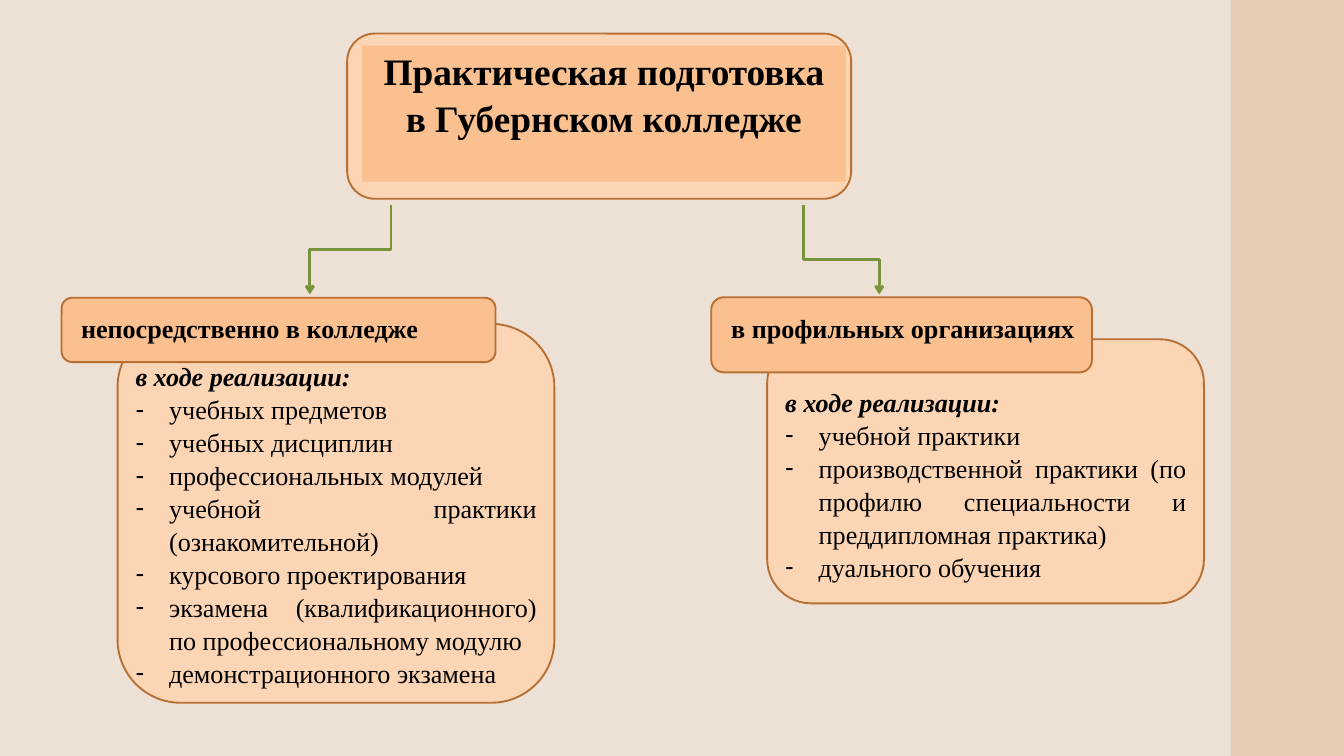
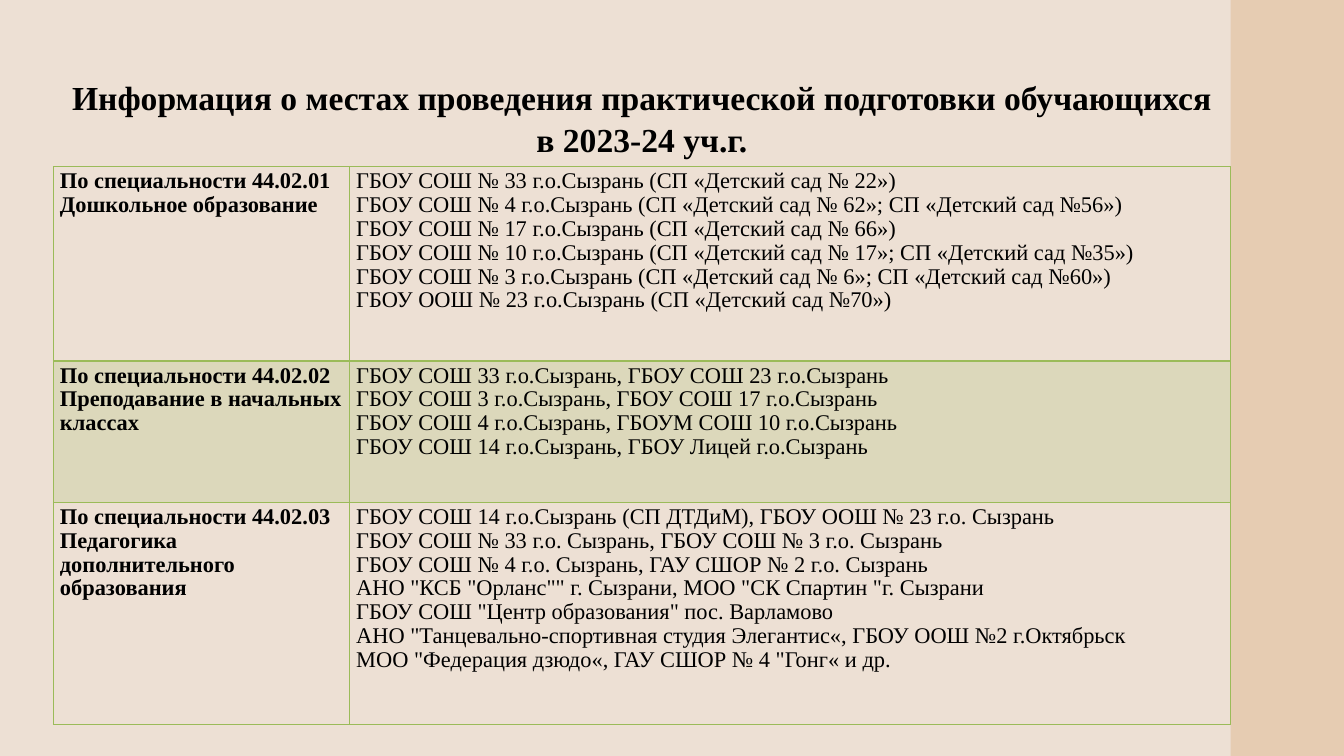
from lxml.etree import SubElement
from pptx import Presentation
from pptx.dml.color import RGBColor
from pptx.enum.shapes import MSO_CONNECTOR, MSO_SHAPE
from pptx.enum.text import MSO_ANCHOR, MSO_AUTO_SIZE, PP_ALIGN
from pptx.oxml.ns import qn
from pptx.util import Pt

COLORS = {
    "background": "EDE0D4",
    "band": "E6CCB2",
    "card": "FCD5B5",
    "label": "FAC090",
    "outline": "B76F34",
    "arrow": "77933C",
    "grid": "9BBB59",
    "text": "000000",
}
FONT = "Times New Roman"
PAGE_WIDTH, PAGE_HEIGHT = 1440, 810
BAND_WIDTH = 121.5
TEXT_SPACING, TABLE_SPACING = 1.05, 0.96

LIST_HEADING = "в ходе реализации:"
COLLEGE_ITEMS = [
    "учебных предметов",
    "учебных дисциплин",
    "профессиональных модулей",
    "учебной практики (ознакомительной)",
    "курсового проектирования",
    "экзамена (квалификационного) по профессиональному модулю",
    "демонстрационного экзамена",
]
PARTNER_ITEMS = [
    "учебной практики",
    "производственной практики (по профилю специальности и преддипломная практика)",
    "дуального обучения",
]
PLACES = [
    ("По специальности 44.02.01 Дошкольное образование", [
        "ГБОУ СОШ № 33 г.о.Сызрань (СП «Детский сад № 22»)",
        "ГБОУ СОШ № 4 г.о.Сызрань (СП «Детский сад № 62»; СП «Детский сад №56»)",
        "ГБОУ СОШ № 17 г.о.Сызрань (СП «Детский сад № 66»)",
        "ГБОУ СОШ № 10 г.о.Сызрань (СП «Детский сад № 17»; СП «Детский сад №35»)",
        "ГБОУ СОШ № 3 г.о.Сызрань (СП «Детский сад № 6»; СП «Детский сад №60»)",
        "ГБОУ ООШ № 23 г.о.Сызрань (СП «Детский сад №70»)",
    ]),
    ("По специальности 44.02.02 Преподавание в начальных классах", [
        "ГБОУ СОШ 33 г.о.Сызрань, ГБОУ СОШ 23 г.о.Сызрань",
        "ГБОУ СОШ 3 г.о.Сызрань, ГБОУ СОШ 17 г.о.Сызрань",
        "ГБОУ СОШ 4 г.о.Сызрань, ГБОУМ СОШ 10 г.о.Сызрань",
        "ГБОУ СОШ 14 г.о.Сызрань, ГБОУ Лицей г.о.Сызрань",
    ]),
    ("По специальности 44.02.03 Педагогика дополнительного образования", [
        "ГБОУ СОШ 14 г.о.Сызрань (СП ДТДиМ), ГБОУ ООШ № 23 г.о. Сызрань",
        "ГБОУ СОШ № 33 г.о. Сызрань, ГБОУ СОШ № 3 г.о. Сызрань",
        "ГБОУ СОШ № 4 г.о. Сызрань, ГАУ СШОР № 2 г.о. Сызрань",
        'АНО "КСБ "Орланс"" г. Сызрани, МОО "СК Спартин "г. Сызрани',
        'ГБОУ СОШ "Центр образования" пос. Варламово',
        'АНО "Танцевально-спортивная студия Элегантис«, ГБОУ ООШ №2 г.Октябрьск',
        'МОО "Федерация дзюдо«, ГАУ СШОР № 4 "Гонг« и др.',
    ]),
]


def color(name):
    return RGBColor.from_string(COLORS[name])


def move(shape, box):
    shape.left, shape.top, shape.width, shape.height = map(Pt, box)


def bring_to_front(shape):
    element = shape._element
    element.getparent().append(element)


def write(frame, lines, size, bold=False, align=PP_ALIGN.LEFT, spacing=TEXT_SPACING):
    """Fill a text frame with one paragraph per line and return the paragraphs."""
    frame.text = "\n".join(lines)
    frame.word_wrap = True
    for para in frame.paragraphs:
        para.alignment = align
        para.line_spacing = spacing
        para.space_before = Pt(0)
        para.font.name = FONT
        para.font.size = Pt(size)
        para.font.bold = bold
        para.font.color.rgb = color("text")
    return frame.paragraphs


def add_title(page, box, lines, size):
    title = page.shapes.title
    move(title, box)
    bring_to_front(title)
    write(title.text_frame, lines, size, True, PP_ALIGN.CENTER)
    title.text_frame.auto_size = MSO_AUTO_SIZE.NONE
    title.text_frame.vertical_anchor = MSO_ANCHOR.TOP
    return title


def add_panel(page, kind, box, fill, outline=None):
    panel = page.shapes.add_shape(kind, *map(Pt, box))
    panel.shadow.inherit = False
    panel.fill.solid()
    panel.fill.fore_color.rgb = color(fill)
    if outline:
        panel.line.color.rgb = color(outline)
        panel.line.width = Pt(2)
    else:
        panel.line.fill.background()
    return panel


def add_page(deck, layout):
    page = deck.slides.add_slide(deck.slide_layouts.get_by_name(layout))
    band = (PAGE_WIDTH - BAND_WIDTH, 0, BAND_WIDTH, PAGE_HEIGHT)
    add_panel(page, MSO_SHAPE.RECTANGLE, band, "band")
    return page


def set_bullet(para, mark=None):
    """Give the paragraph a hanging mark, or no bullet at all."""
    properties = para._p.get_or_add_pPr()
    indent = Pt(36) if mark else 0
    properties.set("marL", str(indent))
    properties.set("indent", str(-indent))
    if mark:
        SubElement(properties, qn("a:buChar")).set("char", mark)
    else:
        SubElement(properties, qn("a:buNone"))


def move_bullets_before_font(para):
    """Keep the schema order: the default font follows the bullet."""
    properties = para._p.pPr
    properties.append(properties.find(qn("a:defRPr")))


def add_heading_panel(page, box):
    left, top, width, height = box
    add_panel(page, MSO_SHAPE.ROUNDED_RECTANGLE, box, "card", "outline")
    inner = (left + 16, top + 13, width - 22, height - 31.5)
    title = add_title(page, inner, ["Практическая подготовка", "в Губернском колледже"], 40)
    title.fill.solid()
    title.fill.fore_color.rgb = color("label")
    frame = title.text_frame
    frame.margin_left = frame.margin_right = frame.margin_top = frame.margin_bottom = 0


def add_branch(page, box, label, label_size, card_drop, body, body_drop, items):
    """A card with a label over its top left corner; drops count from the box top."""
    left, top, width, height = box
    card = (left + 60, top + card_drop, width - 60, height - card_drop)
    add_panel(page, MSO_SHAPE.ROUNDED_RECTANGLE, card, "card", "outline")
    tab = add_panel(page, MSO_SHAPE.ROUNDED_RECTANGLE, (left, top, *label_size), "label", "outline")
    frame = tab.text_frame
    write(frame, [label], 28, True)
    frame.vertical_anchor = MSO_ANCHOR.TOP
    frame.margin_left, frame.margin_top, frame.margin_right = Pt(17.5), Pt(11), Pt(4)

    move(body, (left + 72, top + body_drop, 444, height - body_drop - 4))
    bring_to_front(body)
    paras = write(body.text_frame, [LIST_HEADING, *items], 28, align=PP_ALIGN.JUSTIFY)
    body.text_frame.auto_size = MSO_AUTO_SIZE.NONE
    for number, para in enumerate(paras):
        set_bullet(para, "-" if number else None)
        move_bullets_before_font(para)
    paras[0].font.bold = paras[0].font.italic = True


def add_elbow_arrow(page, start, end, bend):
    """Go down, across at the given share of the drop, and down again."""
    (x1, y1), (x2, y2) = start, end
    drop, shift = y2 - y1, abs(x2 - x1)
    left, top = (x1 + x2 - drop) / 2, (y1 + y2 - shift) / 2
    rightward = x2 > x1
    begin_x, end_x = (left + drop, left) if rightward else (left, left + drop)
    arrow = page.shapes.add_connector(
        MSO_CONNECTOR.ELBOW, Pt(begin_x), Pt(top), Pt(end_x), Pt(top + shift))
    arrow.line.color.rgb = color("arrow")
    arrow.line.width = Pt(3)
    properties = arrow._element.spPr
    properties.find(qn("a:xfrm")).set("rot", str((270 if rightward else 90) * 60000))
    guide = SubElement(properties.find(qn("a:prstGeom")).find(qn("a:avLst")), qn("a:gd"))
    guide.set("name", "adj1")
    guide.set("fmla", f"val {round(bend * 100000)}")
    SubElement(properties.find(qn("a:ln")), qn("a:tailEnd")).set("type", "arrow")
    SubElement(properties, qn("a:effectLst"))


def build_scheme_page(deck):
    page = add_page(deck, "Two Content")
    college, partners = page.placeholders[1], page.placeholders[2]
    add_heading_panel(page, (372, 36, 540, 177))
    add_elbow_arrow(page, (419, 219.5), (332, 315.5), 0.5)
    add_branch(page, (66, 319, 528, 434), "непосредственно в колледже",
               (465, 69), 28, college, 62, COLLEGE_ITEMS)
    add_branch(page, (762, 318.5, 528, 328), "в профильных организациях",
               (408, 80.5), 45, partners, 90, PARTNER_ITEMS)
    add_elbow_arrow(page, (860.5, 219.5), (942, 315.5), 0.61)


def set_borders(cell, bottom):
    properties = cell._tc.get_or_add_tcPr()
    for number, side in enumerate(("lnL", "lnR", "lnT", "lnB")):
        line = SubElement(properties, qn(f"a:{side}"))
        line.set("w", str(Pt(bottom if side == "lnB" else 1)))
        fill = SubElement(line, qn("a:solidFill"))
        SubElement(fill, qn("a:srgbClr")).set("val", COLORS["grid"])
        properties.insert(number, line)


def fill_cell(cell, tinted):
    if not tinted:
        cell.fill.background()
        return
    cell.fill.solid()
    cell.fill.fore_color.rgb = color("grid")
    tint = cell._tc.tcPr.find(qn("a:solidFill")).find(qn("a:srgbClr"))
    SubElement(tint, qn("a:alpha")).set("val", "20000")


def add_places_table(page, box, columns, rows):
    table = page.shapes.add_table(len(rows), len(columns), *map(Pt, box)).table
    table.first_row = table.horz_banding = False
    for column, width in zip(table.columns, columns):
        column.width = Pt(width)
    for row, height in zip(table.rows, rows):
        row.height = Pt(height)
    for number, (speciality, places) in enumerate(PLACES):
        for column, lines in enumerate(([speciality], places)):
            cell = table.cell(number, column)
            write(cell.text_frame, lines, 24, column == 0, spacing=TABLE_SPACING)
            fill_cell(cell, number == 1)
            set_borders(cell, 2 if number == 0 else 1)


def build_places_page(deck):
    page = add_page(deck, "Title Only")
    left, width = 57, 1261.5
    add_title(page, (left, 76.5, width, 102), [
        "Информация о местах проведения практической подготовки обучающихся в 2023-24 уч.г."], 36)
    add_places_table(page, (left, 178.5, width, 597.5), (317.5, 944), (208, 151.5, 238))


def main():
    deck = Presentation()
    deck.slide_width, deck.slide_height = Pt(PAGE_WIDTH), Pt(PAGE_HEIGHT)
    background = deck.slide_master.background.fill
    background.solid()
    background.fore_color.rgb = color("background")
    build_scheme_page(deck)
    build_places_page(deck)
    deck.save("out.pptx")


if __name__ == "__main__":
    main()
